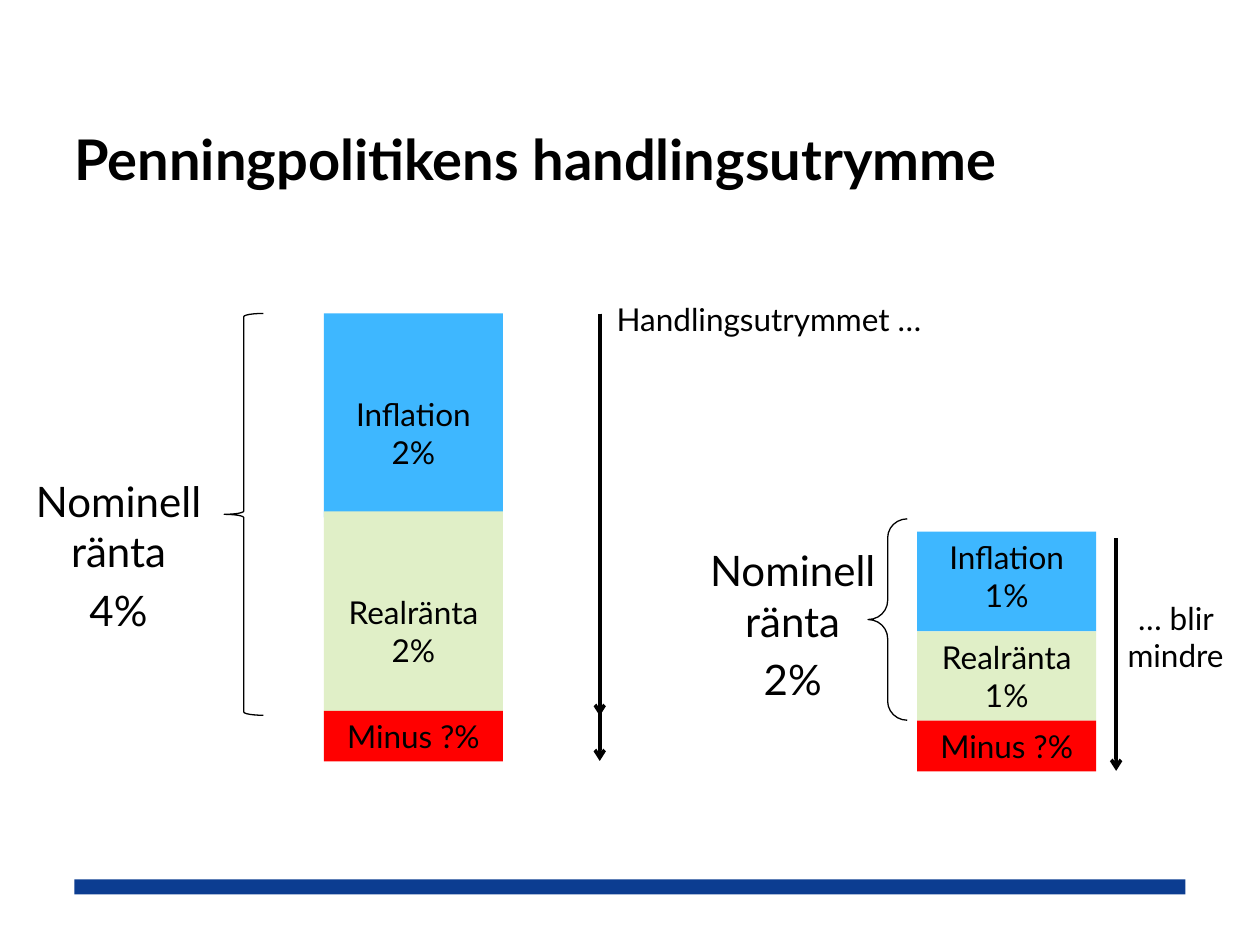
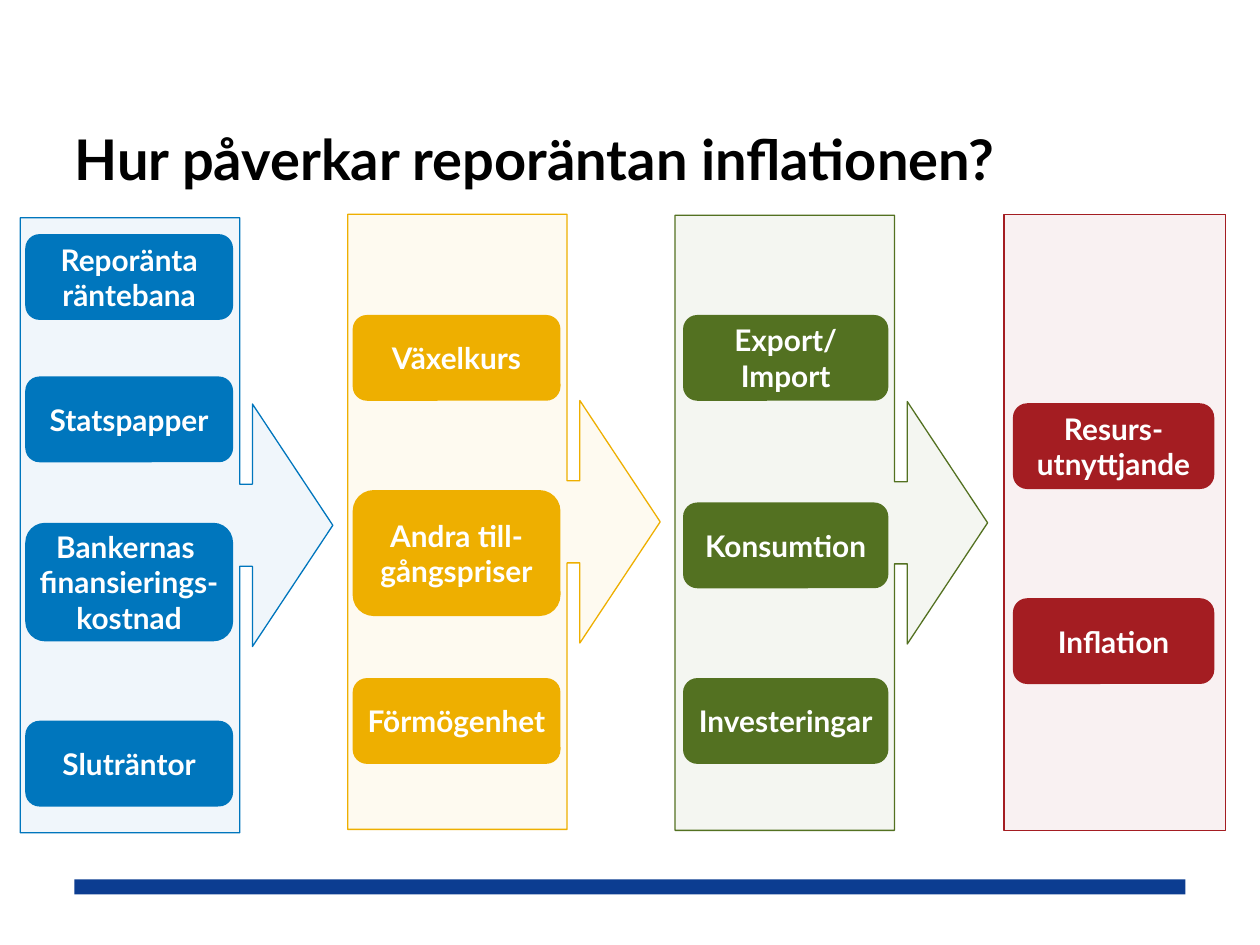
from dataclasses import dataclass

from lxml import etree
from pptx import Presentation
from pptx.dml.color import RGBColor
from pptx.enum.shapes import MSO_CONNECTOR, MSO_SHAPE
from pptx.enum.text import MSO_ANCHOR, PP_ALIGN
from pptx.oxml.ns import qn
from pptx.util import Cm, Pt

RECTANGLE = MSO_SHAPE.RECTANGLE
ROUNDED = MSO_SHAPE.ROUNDED_RECTANGLE
LEFT_BRACE = MSO_SHAPE.LEFT_BRACE
ARROW_CALLOUT = MSO_SHAPE.RIGHT_ARROW_CALLOUT
STRAIGHT = MSO_CONNECTOR.STRAIGHT
TOP, MIDDLE, BOTTOM = MSO_ANCHOR.TOP, MSO_ANCHOR.MIDDLE, MSO_ANCHOR.BOTTOM
LEFT, CENTER = PP_ALIGN.LEFT, PP_ALIGN.CENTER


@dataclass(frozen=True)
class Theme:
    font: str = "Lato"
    black: str = "000000"
    white: str = "FFFFFF"
    band: str = "0C3D91"
    inflation: str = "3EB7FF"
    real_rate: str = "E0EFC7"
    minus: str = "FF0000"
    blue: str = "0076BD"
    yellow: str = "EEAF00"
    green: str = "537121"
    red: str = "A41D22"
    title_size: float = 32
    rate_size: float = 24
    label_size: float = 18
    box_size: float = 17
    thin_line: float = 0.75
    arrow_line: float = 2
    panel_opacity: int = 6


THEME = Theme()


class Deck:
    def __init__(self, theme):
        self.theme = theme
        self.presentation = Presentation()
        self.presentation.slide_width = Cm(25.4)
        self.presentation.slide_height = Cm(19.05)
        self.slide = None

    def new_slide(self, title):
        layout = self.presentation.slide_layouts[6]
        self.slide = self.presentation.slides.add_slide(layout)
        self.shape(RECTANGLE, 1.5, 17.73, 22.4, 0.3, fill=self.theme.band)
        self.text(1.5, 0.69, 20.7, 3.18, [title], self.theme.title_size,
                  bold=True, align=LEFT, anchor=BOTTOM, insets=(0, 0, 0, 0))

    def set_lines(self, frame, lines, size, color, bold=False, align=CENTER, space=0):
        for index, line in enumerate(lines):
            paragraph = frame.add_paragraph() if index else frame.paragraphs[0]
            paragraph.text = line
            paragraph.alignment = align
            paragraph.space_before = Pt(space if index else 0)
            paragraph.font.name = self.theme.font
            paragraph.font.size = Pt(size)
            paragraph.font.bold = bold
            paragraph.font.color.rgb = RGBColor.from_string(color)

    def text(self, left, top, width, height, lines, size, bold=False, align=CENTER,
             anchor=TOP, insets=(0.25, 0.13, 0.25, 0.13), space=0):
        box = self.slide.shapes.add_textbox(Cm(left), Cm(top), Cm(width), Cm(height))
        frame = box.text_frame
        frame.word_wrap = True
        frame.vertical_anchor = anchor
        (frame.margin_left, frame.margin_top,
         frame.margin_right, frame.margin_bottom) = map(Cm, insets)
        self.set_lines(frame, lines, size, self.theme.black, bold, align, space)

    def shape(self, kind, left, top, width, height, fill=None, line=None,
              opacity=None, adjustments=()):
        shape = self.slide.shapes.add_shape(kind, Cm(left), Cm(top), Cm(width), Cm(height))
        shape.shadow.inherit = False
        for index, value in enumerate(adjustments):
            shape.adjustments[index] = value
        if fill:
            shape.fill.solid()
            shape.fill.fore_color.rgb = RGBColor.from_string(fill)
        else:
            shape.fill.background()
        if line:
            shape.line.color.rgb = RGBColor.from_string(line)
            shape.line.width = Pt(self.theme.thin_line)
        else:
            shape.line.fill.background()
        if opacity:
            color = shape._element.spPr.find(qn("a:solidFill"))[0]
            etree.SubElement(color, qn("a:alpha"), val=str(opacity * 1000))
        return shape

    def bar(self, left, top, height, fill, lines, text_offset=0.13):
        frame = self.shape(RECTANGLE, left, top, 3.61, height, fill).text_frame
        frame.word_wrap = True
        frame.vertical_anchor = TOP
        frame.margin_top = Cm(text_offset)
        self.set_lines(frame, lines, self.theme.label_size, self.theme.black)

    def brace(self, left, top, height, adjustments=()):
        self.shape(LEFT_BRACE, left, top, 0.79, height, line=self.theme.black,
                   adjustments=adjustments)

    def rate(self, left, top, height, value):
        self.text(left, top, 4.01, height, ["Nominell ränta", value],
                  self.theme.rate_size, insets=(0, 0.13, 0.25, 0.13), space=4.8)

    def down_arrow(self, x, top, bottom):
        arrow = self.slide.shapes.add_connector(STRAIGHT, Cm(x), Cm(top), Cm(x), Cm(bottom))
        arrow.line.color.rgb = RGBColor.from_string(self.theme.black)
        arrow.line.width = Pt(self.theme.arrow_line)
        properties = arrow._element.spPr
        etree.SubElement(properties.find(qn("a:ln")), qn("a:tailEnd"), type="arrow")
        etree.SubElement(properties, qn("a:effectLst"))

    def panel(self, kind, left, top, width, height, color, adjustments=()):
        self.shape(kind, left, top, width, height, color, color,
                   self.theme.panel_opacity, adjustments)

    def box(self, left, top, width, height, color, lines):
        frame = self.shape(ROUNDED, left, top, width, height, color).text_frame
        frame.word_wrap = False
        frame.vertical_anchor = MIDDLE
        self.set_lines(frame, lines, self.theme.box_size, self.theme.white, bold=True)


def build_room_for_manoeuvre(deck):
    theme = deck.theme
    deck.new_slide("Penningpolitikens handlingsutrymme")

    deck.rate(0.51, 9.45, 1.68, "4%")
    deck.brace(4.52, 6.32, 8.1)
    deck.bar(6.53, 6.32, 4.11, theme.inflation, ["Inflation", "2%"], 1.65)
    deck.bar(6.53, 10.31, 4.11, theme.real_rate, ["Realränta", "2%"], 1.65)

    deck.rate(14.1, 10.85, 1.88, "2%")
    deck.brace(17.5, 10.46, 4.06, (0.485, 0.5))
    deck.bar(18.49, 10.72, 2.01, theme.inflation, ["Inflation", "1%"])
    deck.bar(18.49, 12.73, 1.8, theme.real_rate, ["Realränta", "1%"])

    for left, top in ((6.53, 14.33), (18.49, 14.53)):
        deck.bar(left, top, 1.02, theme.minus, ["Minus ?%"])
    for x, top, bottom in ((12.09, 6.32, 14.43), (12.09, 6.32, 15.34),
                           (22.5, 10.85, 15.54)):
        deck.down_arrow(x, top, bottom)
    deck.text(11.91, 5.92, 7.19, 1.02, ["Handlingsutrymmet …"], theme.label_size)
    deck.text(22.1, 11.94, 3.2, 1.8, ["… blir mindre"], theme.label_size)


def build_transmission(deck):
    theme = deck.theme
    deck.new_slide("Hur påverkar reporäntan inflationen?")

    deck.panel(RECTANGLE, 20.24, 4.32, 4.47, 12.42, theme.red)
    callouts = ((theme.blue, 4.39), (theme.yellow, 4.32), (theme.green, 4.34))
    for index, (color, top) in enumerate(callouts):
        deck.panel(ARROW_CALLOUT, 0.41 + 6.6 * index, top, 6.3, 12.4, color,
                   (0.263, 0.388, 0.257, 0.702))

    low = 1.73
    columns = (
        (0.51, 4.19, theme.blue, (
            (4.72, low, ["Reporänta", "räntebana"]),
            (7.59, low, ["Statspapper"]),
            (10.54, 2.39, ["Bankernas ", "finansierings-", "kostnad"]),
            (14.53, low, ["Sluträntor"]))),
        (7.11, 4.19, theme.yellow, (
            (6.35, low, ["Växelkurs"]),
            (9.88, 2.54, ["Andra till-", "gångspriser"]),
            (13.67, low, ["Förmögenhet"]))),
        (13.77, 4.14, theme.green, (
            (6.35, low, ["Export/", "Import"]),
            (10.13, low, ["Konsumtion"]),
            (13.67, low, ["Investeringar"]))),
        (20.42, 4.06, theme.red, (
            (8.13, low, ["Resurs-", "utnyttjande"]),
            (12.06, low, ["Inflation"]))),
    )
    for left, width, color, boxes in columns:
        for top, height, lines in boxes:
            deck.box(left, top, width, height, color, lines)


def main():
    deck = Deck(THEME)
    build_room_for_manoeuvre(deck)
    build_transmission(deck)
    deck.presentation.save("out.pptx")


if __name__ == "__main__":
    main()
